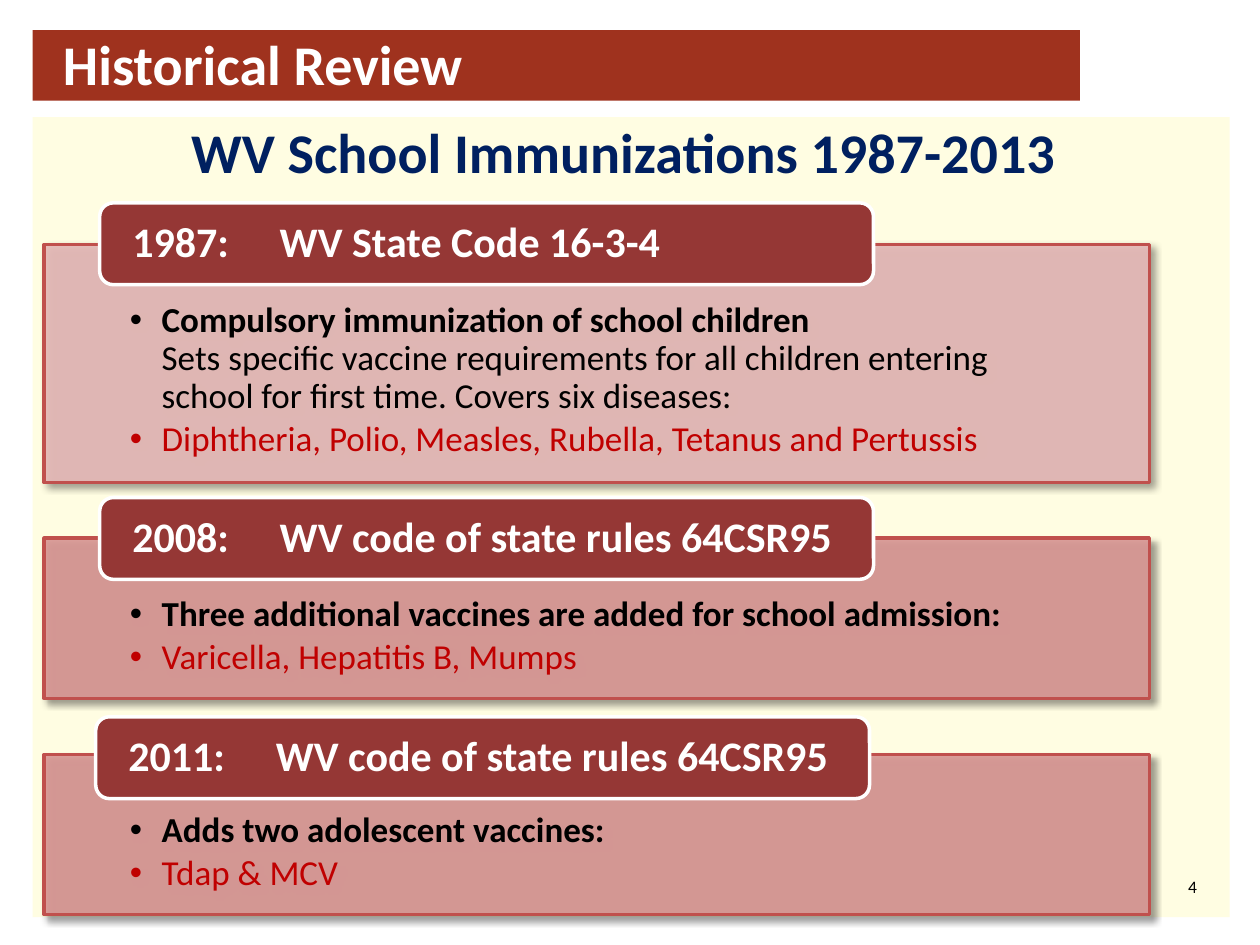
from lxml.etree import SubElement as Sub
from pptx import Presentation as Deck
from pptx.dml.color import RGBColor as Rgb
from pptx.enum.shapes import MSO_SHAPE as Kind
from pptx.enum.text import MSO_ANCHOR as Anchor, PP_ALIGN as Align
from pptx.oxml.ns import qn
from pptx.util import Cm, Pt

WHITE = Rgb(0xFF, 0xFF, 0xFF)
BLACK = Rgb(0, 0, 0)
CREAM = Rgb(0xFF, 0xFD, 0xE2)
BRICK = Rgb(0x9F, 0x32, 0x1E)
NAVY = Rgb(0x00, 0x20, 0x60)
WINE = Rgb(0x95, 0x37, 0x35)
EDGE = Rgb(0xC0, 0x50, 0x4D)
RED = Rgb(0xC0, 0, 0)
PINK = Rgb(0xE6, 0xB9, 0xB8)
ROSE = Rgb(0xD9, 0x96, 0x94)


class Page:
    font = "Calibri"

    def __init__(self, slide):
        self.shapes = slide.shapes

    def block(self, box, fill, line=None, kind=Kind.RECTANGLE):
        shape = self.shapes.add_shape(kind, *map(Cm, box))
        shape.shadow.inherit = False
        shape.fill.solid()
        shape.fill.fore_color.rgb = fill
        if line is None:
            shape.line.fill.background()
        else:
            shape.line.color.rgb = line
            shape.line.width = Pt(2)
        return shape

    def frame(self, shape, pads=(0, 0, 0, 0), anchor=Anchor.TOP):
        frame = shape.text_frame
        frame.word_wrap = True
        frame.vertical_anchor = anchor
        (frame.margin_left, frame.margin_top,
         frame.margin_right, frame.margin_bottom) = map(Cm, pads)
        return frame

    def style(self, run, size, color, bold=False):
        font = run.font
        font.name, font.size, font.bold = self.font, Pt(size), bold
        font.color.rgb = color

    def label(self, box, text, size, color, bold=True,
              align=Align.LEFT, anchor=Anchor.TOP):
        frame = self.frame(self.shapes.add_textbox(*map(Cm, box)), anchor=anchor)
        frame.text = text
        para = frame.paragraphs[0]
        para.alignment = align
        self.style(para.runs[0], size, color, bold)

    def shade(self, shape):
        props = shape.fill.fore_color._xFill.find(qn("a:srgbClr"))
        Sub(props, qn("a:alpha"), val="90000")
        effects = shape._element.spPr.find(qn("a:effectLst"))
        glow = Sub(effects, qn("a:outerShdw"), blurRad=str(Pt(4)),
                   dist=str(Pt(3)), dir="2700000", algn="tl", rotWithShape="0")
        tone = Sub(glow, qn("a:srgbClr"), val="000000")
        Sub(tone, qn("a:alpha"), val="40000")

    def bullet(self, para, text, color):
        props = para._p.get_or_add_pPr()
        props.set("marL", str(Cm(0.64)))
        props.set("indent", str(-Cm(0.64)))
        Sub(props, qn("a:buFont"), typeface="Arial")
        Sub(props, qn("a:buChar"), char="•")
        para.text = text
        para.alignment = Align.LEFT
        para.line_spacing = 0.9
        para.space_after = Pt(3)
        for spot, run in enumerate(para.runs):
            self.style(run, 20, color, color == BLACK and spot == 0)

    def panel(self, top, high, fill, lead, list_text):
        shape = self.block((0.89, top, 22.28, high), fill, EDGE)
        self.shade(shape)
        frame = self.frame(shape, (1.73, 1.17, 1.73, 0.41))
        self.bullet(frame.paragraphs[0], lead, BLACK)
        self.bullet(frame.add_paragraph(), list_text, RED)

    def header(self, left, top, year, name):
        shape = self.block((left, top, 15.6, 1.65), WINE, WHITE,
                           Kind.ROUNDED_RECTANGLE)
        frame = self.frame(shape, (0.58, 0, 0, 0), Anchor.MIDDLE)
        para = frame.paragraphs[0]
        tabs = Sub(para._p.get_or_add_pPr(), qn("a:tabLst"))
        Sub(tabs, qn("a:tab"), pos=str(Cm(2.97)), algn="l")
        para.text = f"{year}:\t{name}"
        para.alignment = Align.LEFT
        para.line_spacing = 0.9
        for run in para.runs:
            self.style(run, 24, WHITE, True)


LAWS = [
    (4.93, 4.8, PINK, 2.01, 4.09, 1987, "WV State Code 16-3-4",
     "Compulsory immunization of school children\v"
     "Sets specific vaccine requirements for all children entering "
     "school for first time. Covers six diseases:",
     "Diphtheria, Polio, Measles, Rubella, Tetanus and Pertussis"),
    (10.85, 3.23, ROSE, 2.01, 10.03, 2008, "WV code of state rules 64CSR95",
     "Three additional vaccines are added for school admission:",
     "Varicella, Hepatitis B, Mumps"),
    (15.21, 3.23, ROSE, 1.93, 14.45, 2011, "WV code of state rules 64CSR95",
     "Adds two adolescent vaccines:",
     "Tdap & MCV"),
]


def main():
    deck = Deck()
    deck.slide_width, deck.slide_height = Cm(25.4), Cm(19.05)
    page = Page(deck.slides.add_slide(deck.slide_layouts[6]))
    page.block((0.66, 2.36, 24.13, 16.13), CREAM)
    page.block((0.66, 0.61, 21.11, 1.42), BRICK)
    page.label((1.27, 0.64, 20.4, 1.27), "Historical Review", 32, WHITE,
               anchor=Anchor.MIDDLE)
    page.label((0.43, 2.36, 24.28, 16.1), "WV School Immunizations 1987-2013",
               32, NAVY, align=Align.CENTER)
    page.label((23.16, 17.65, 0.97, 0.48), "4", 10, BLACK, bold=False,
               align=Align.RIGHT)
    for top, high, fill, left, head, year, name, lead, list_text in LAWS:
        page.panel(top, high, fill, lead, list_text)
        page.header(left, head, year, name)
    deck.save("out.pptx")


if __name__ == "__main__":
    main()
